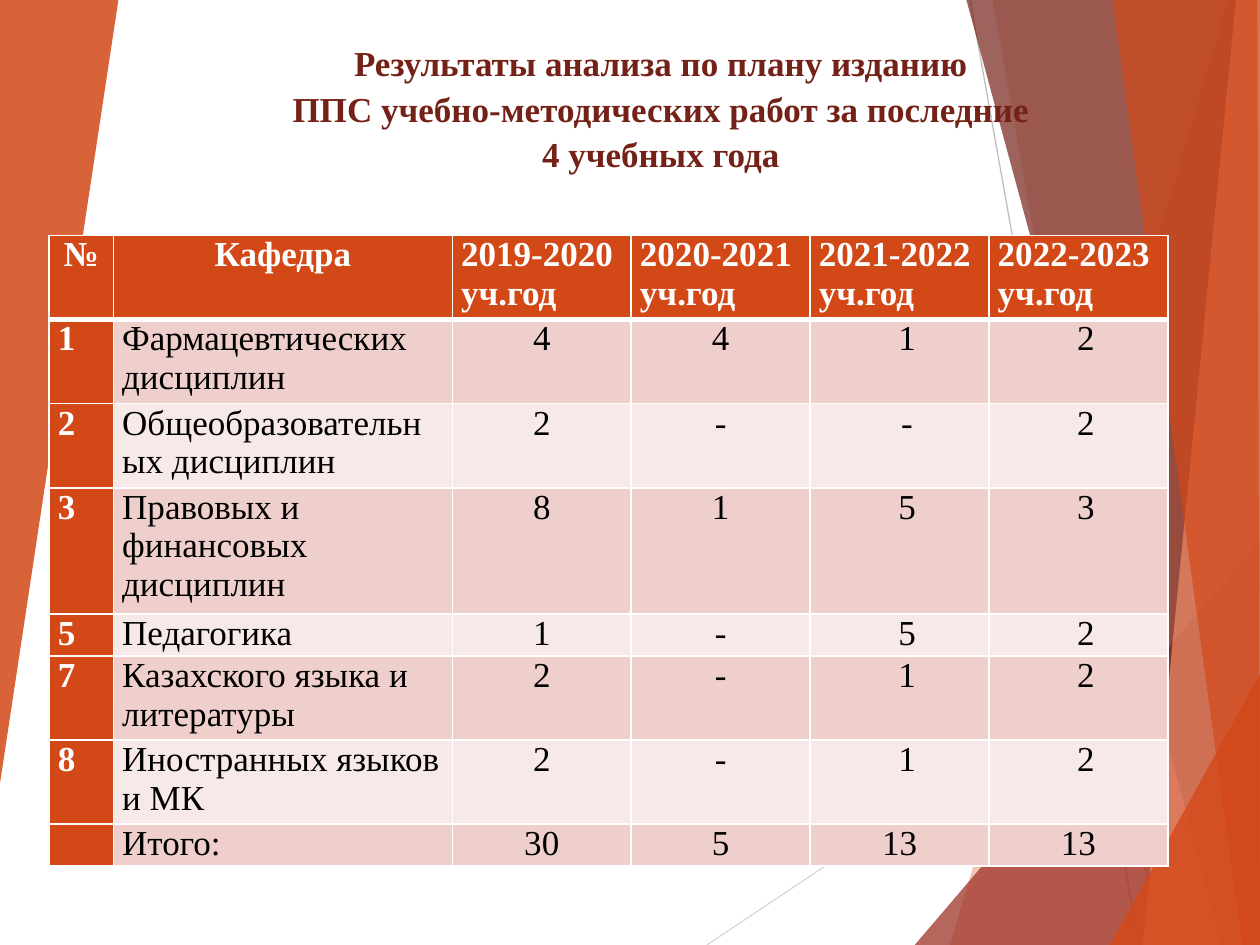
from pptx import Presentation
from pptx.dml.color import RGBColor
from pptx.enum.shapes import MSO_CONNECTOR
from pptx.enum.text import MSO_ANCHOR, PP_ALIGN
from pptx.oxml.ns import qn
from pptx.util import Inches, Pt
from lxml import etree

LINE = MSO_CONNECTOR.STRAIGHT
MIDDLE = MSO_ANCHOR.MIDDLE
LEFT, CENTER, JUSTIFY = PP_ALIGN.LEFT, PP_ALIGN.CENTER, PP_ALIGN.JUSTIFY
WIDE, HIGH = Inches(10), Inches(7.5)

HUES = {
    "white": "FFFFFF", "black": "000000", "pale": "D9D9D9", "gray": "BFBFBF",
    "orange": "D34817", "peach": "EF8C6A", "red": "9B2D1F", "wine": "742217",
    "dark": "EFCFCC", "light": "F7E9E8",
}
BASE = {"name": "Times New Roman", "size": Pt(20)}
INSET = {"margin_left": Inches(0.07), "margin_right": Inches(0.07),
         "margin_top": 0, "margin_bottom": 0}

RAYS = [
    ("pale", (56.1, 100), (100, 60.93)),
    ("gray", (77, 0), (90.4, 100)),
]
FACETS = [
    ("orange", 30, [(97.5, 0), (75.4, 100), (100, 100), (100, 0)]),
    ("orange", 20, [(78.8, 0), (91.9, 100), (100, 100), (100, 0)]),
    ("red", 72, [(72.6, 100), (100, 57.2), (100, 100)]),
    ("wine", 70, [(76.7, 0), (97, 100), (100, 100), (100, 0)]),
    ("peach", 70, [(98.1, 0), (90.7, 100), (100, 100), (100, 0)]),
    ("orange", 65, [(88.3, 0), (98.6, 100), (100, 100), (99.8, 0)]),
    ("orange", 80, [(88.1, 100), (100, 71.33), (100, 100)]),
    ("orange", 85, [(0, 0), (9.4, 0), (0, 82.93)]),
]
TITLE = [
    "Результаты анализа по плану изданию",
    "ППС учебно-методических работ за последние",
    "4 учебных года",
]
COLS = [5.1, 26.9] + [14.2] * 4
LINES = [2, 2, 2, 3, 1, 2, 2, 1]
ROWS = [
    ["№", "Кафедра", "2019-2020 уч.год", "2020-2021 уч.год",
     "2021-2022\nуч.год", "2022-2023 уч.год"],
    ["1", "Фармацевтических дисциплин", "4", "4", "1", "2"],
    ["2", "Общеобразовательных дисциплин", "2", "-", "-", "2"],
    ["3", "Правовых и финансовых дисциплин", "8", "1", "5", "3"],
    ["5", "Педагогика", "1", "-", "5", "2"],
    ["7", "Казахского языка и литературы", "2", "-", "1", "2"],
    ["8", "Иностранных языков и МК", "2", "-", "1", "2"],
    ["", "Итого:", "30", "5", "13", "13"],
]


def across(share):
    """Turn a percent of the slide's width into a length."""
    return round(WIDE * share / 100)


def down(share):
    """Turn a percent of the slide's height into a length."""
    return round(HIGH * share / 100)


def tint(name):
    """Look up a named colour."""
    return RGBColor.from_string(HUES[name])


def apply(item, form):
    """Set every value of a format dict on an item."""
    for key, value in form.items():
        setattr(item, key, value)


def write(frame, texts, hue, bold, form):
    """Fill a text frame with equally styled paragraphs."""
    for i, text in enumerate(texts):
        para = frame.add_paragraph() if i else frame.paragraphs[0]
        apply(para, form)
        if text:
            run = para.add_run()
            run.text = text
            apply(run.font, {**BASE, "bold": bold})
            run.font.color.rgb = tint(hue)
        yield para


def add_ray(slide, hue, start, end):
    """Draw a thin line between two points."""
    ray = slide.shapes.add_connector(
        LINE, across(start[0]), down(start[1]), across(end[0]), down(end[1]))
    ray.line.color.rgb = tint(hue)
    ray.line.width = Pt(0.75)
    etree.SubElement(ray._element.spPr, qn("a:effectLst"))


def add_facet(slide, hue, alpha, points):
    """Draw a translucent polygon."""
    spots = [(across(x), down(y)) for x, y in points]
    pen = slide.shapes.build_freeform(*spots[0])
    pen.add_line_segments(spots[1:], close=True)
    facet = pen.convert_to_shape()
    facet.shadow.inherit = False
    facet.line.fill.background()
    facet.fill.solid()
    facet.fill.fore_color.rgb = tint(hue)
    color = facet._element.spPr.find(".//" + qn("a:srgbClr"))
    etree.SubElement(color, qn("a:alpha"), val=str(alpha * 1000))


def add_title(slide):
    """Place the centred title."""
    box = slide.shapes.add_textbox(
        across(18.6), down(3.87), across(67.7), down(14.8))
    apply(box.text_frame, {"word_wrap": True, "vertical_anchor": MIDDLE})
    form = {"alignment": CENTER, "line_spacing": 1.08}
    list(write(box.text_frame, TITLE, "wine", True, form))


def edge(cell, widths):
    """Give a cell white borders of the given widths."""
    props = cell._tc.get_or_add_tcPr()
    for side, width in widths.items():
        line = etree.SubElement(props, qn("a:ln" + side), w=str(Pt(width)))
        fill = etree.SubElement(line, qn("a:solidFill"))
        etree.SubElement(fill, qn("a:srgbClr"), val=HUES["white"])


def place(row, col):
    """Choose the alignment of a table cell."""
    if row == 0:
        return CENTER if col < 2 else LEFT
    if col == 0 or (col == 1 and row == len(ROWS) - 1):
        return JUSTIFY
    return LEFT if col == 1 else CENTER


def fill_cell(cell, row, col, text):
    """Style one table cell and write its text."""
    head = row == 0 or col == 0
    apply(cell, INSET)
    edge(cell, {"L": 1, "R": 1, "T": 3 if row == 1 else 1,
                "B": 1 if row else 3})
    cell.fill.solid()
    band = "dark" if row % 2 else "light"
    cell.fill.fore_color.rgb = tint("orange" if head else band)
    hue = "white" if head else "black"
    form = {"alignment": place(row, col)}
    for para in write(cell.text_frame, text.split("\n"), hue, head, form):
        if col > 3 and 0 < row < len(ROWS) - 1:
            props = para._p.get_or_add_pPr()
            props.set("marL", str(Inches(0.02)))
            props.set("indent", str(Inches(0.1)))


def add_grid(slide):
    """Build the table of results by department."""
    step = HIGH / 22.5
    grid = slide.shapes.add_table(
        len(ROWS), len(COLS), across(3.9), down(24.93),
        across(sum(COLS)), round(step * sum(LINES))).table
    for col, share in zip(grid.columns, COLS):
        col.width = across(share)
    for row, count in zip(grid.rows, LINES):
        row.height = round(step * count)
    for r, texts in enumerate(ROWS):
        for c, text in enumerate(texts):
            fill_cell(grid.cell(r, c), r, c, text)


def main():
    """Build the slide and save it."""
    deck = Presentation()
    apply(deck, {"slide_width": WIDE, "slide_height": HIGH})
    slide = deck.slides.add_slide(deck.slide_layouts[6])
    for ray in RAYS:
        add_ray(slide, *ray)
    for facet in FACETS:
        add_facet(slide, *facet)
    add_title(slide)
    add_grid(slide)
    deck.save("out.pptx")


if __name__ == "__main__":
    main()
